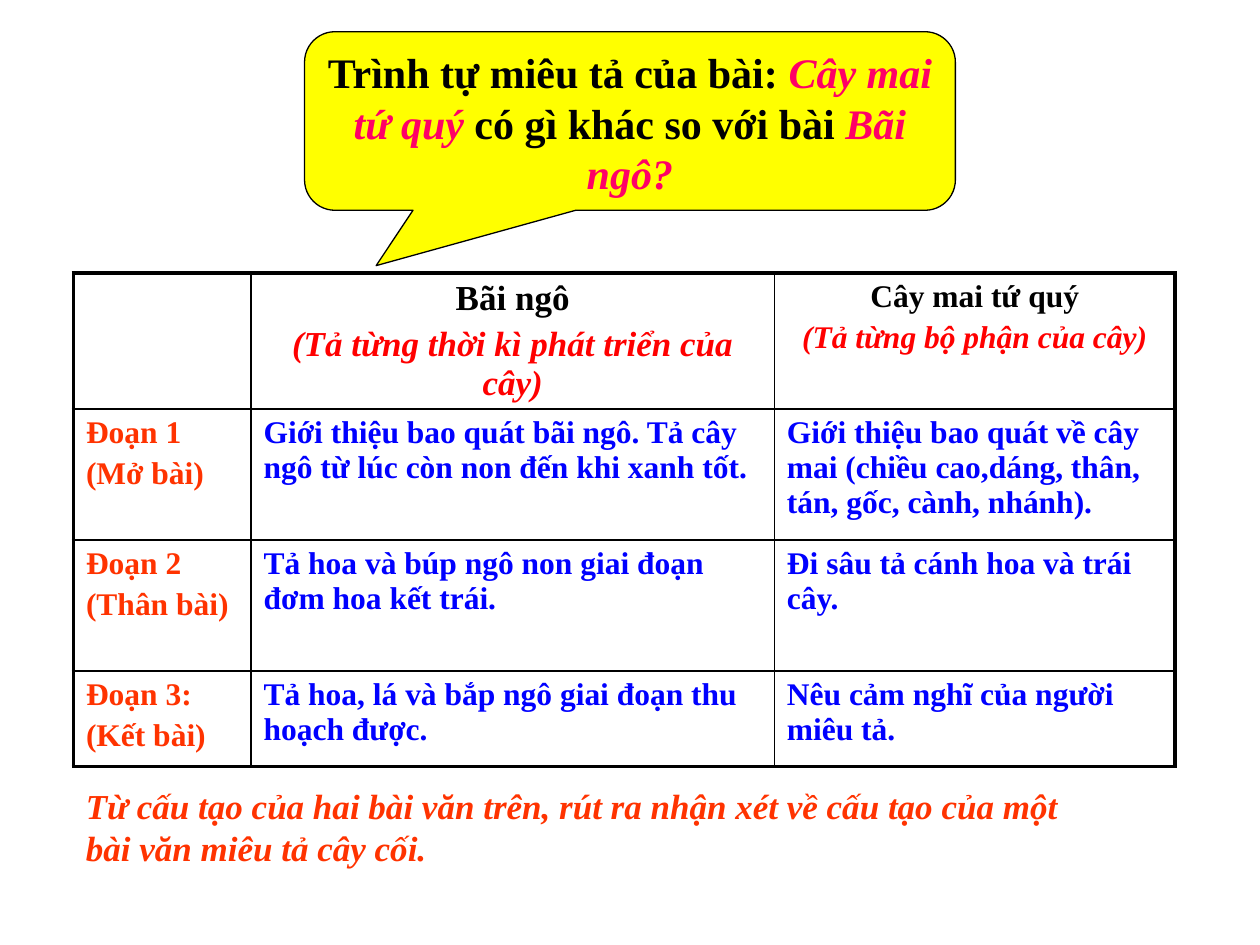
from dataclasses import dataclass

from lxml.etree import SubElement
from pptx import Presentation
from pptx.dml.color import RGBColor
from pptx.enum.shapes import MSO_SHAPE
from pptx.enum.text import MSO_ANCHOR, MSO_AUTO_SIZE, PP_ALIGN
from pptx.oxml.ns import qn
from pptx.util import Cm, Pt


@dataclass(frozen=True)
class Theme:
    """Colours, type sizes and line widths of the slide."""
    font: str = "Times New Roman"
    ink: str = "000000"
    bubble: str = "FFFF00"
    title: str = "FF0066"
    method: str = "FF0000"
    accent: str = "FF3300"
    body: str = "0000FF"
    large: int = 24
    medium: int = 20
    small: int = 18
    frame: float = 2.25
    rule: float = 1
    outline: float = 0.75


THEME = Theme()


def apply(obj, values):
    """Set each attribute named in values on obj."""
    for name, value in values.items():
        setattr(obj, name, value)


def add_paragraph(tf, runs, size, align=PP_ALIGN.LEFT, before=0):
    """Write (text, colour, italic) runs, with space before in percent."""
    p = tf.paragraphs[0]
    if p.runs:
        p = tf.add_paragraph()
    p.alignment = align
    if before:
        spacing = SubElement(p._p.get_or_add_pPr(), qn("a:spcBef"))
        SubElement(spacing, qn("a:spcPct"), val=str(before * 1000))
    for text, colour, italic in runs:
        r = p.add_run()
        r.text = text
        apply(r.font, {"name": THEME.font, "size": Pt(size),
                       "bold": True, "italic": italic})
        r.font.color.rgb = RGBColor.from_string(colour)


def add_border(cell, side, width):
    """Draw one side of a table cell."""
    ln = SubElement(cell._tc.get_or_add_tcPr(), qn(f"a:ln{side}"),
                    w=str(Pt(width)))
    fill = SubElement(ln, qn("a:solidFill"))
    SubElement(fill, qn("a:srgbClr"), val=THEME.ink)


def add_question(s, left, top, width, height):
    """Place the question in a speech bubble."""
    sp = s.shapes.add_shape(MSO_SHAPE.ROUNDED_RECTANGULAR_CALLOUT,
                            left, top, width, height)
    for i, value in enumerate((-0.39, 0.81, 0.17)):
        sp.adjustments[i] = value
    sp.shadow.inherit = False
    sp.fill.solid()
    sp.fill.fore_color.rgb = RGBColor.from_string(THEME.bubble)
    sp.line.color.rgb = RGBColor.from_string(THEME.ink)
    sp.line.width = Pt(THEME.outline)
    apply(sp.text_frame, {"word_wrap": True, "vertical_anchor": MSO_ANCHOR.TOP})
    runs = [
        ("Trình tự miêu tả của bài: ", THEME.ink, False),
        ("Cây mai tứ quý", THEME.title, True),
        (" có gì khác so với bài ", THEME.ink, False),
        ("Bãi ngô?", THEME.title, True),
    ]
    add_paragraph(sp.text_frame, runs, THEME.large, PP_ALIGN.CENTER)


def add_comparison(s, left, top, col_widths, row_heights):
    """Place the table that compares the two texts section by section."""
    headers = [
        ("Bãi ngô", "(Tả từng thời kì phát triển của cây)", THEME.medium),
        ("Cây mai tứ quý", "(Tả từng bộ phận của cây)", THEME.small),
    ]
    sections = [
        (("Đoạn 1", "(Mở bài)"),
         "Giới thiệu bao quát bãi ngô. Tả cây ngô từ lúc còn non đến khi xanh tốt.",
         "Giới thiệu bao quát về cây mai (chiều cao,dáng, thân, tán, gốc, cành, nhánh)."),
        (("Đoạn 2", "(Thân bài)"),
         "Tả hoa và búp ngô non giai đoạn đơm hoa kết trái.",
         "Đi sâu tả cánh hoa và trái cây."),
        (("Đoạn 3:", "(Kết bài)"),
         "Tả hoa, lá và bắp ngô giai đoạn thu hoạch được.",
         "Nêu cảm nghĩ của người miêu tả."),
    ]
    n_rows, n_cols = len(row_heights), len(col_widths)
    table = s.shapes.add_table(n_rows, n_cols, left, top, sum(col_widths),
                               sum(row_heights)).table
    apply(table, {"first_row": False, "horz_banding": False})
    for column, width in zip(table.columns, col_widths):
        column.width = width
    for row, height in zip(table.rows, row_heights):
        row.height = height

    for i in range(n_rows):
        for j in range(n_cols):
            cell = table.cell(i, j)
            outer = {"L": j == 0, "R": j == n_cols - 1,
                     "T": i == 0, "B": i == n_rows - 1}
            for side, on_frame in outer.items():
                add_border(cell, side, THEME.frame if on_frame else THEME.rule)
            cell.fill.background()

    for j, (name, method, size) in enumerate(headers, 1):
        tf = table.cell(0, j).text_frame
        for run in ((name, THEME.ink, False), (method, THEME.method, True)):
            add_paragraph(tf, [run], size, PP_ALIGN.CENTER, 20)
    for i, (labels, *contents) in enumerate(sections, 1):
        for label in labels:
            add_paragraph(table.cell(i, 0).text_frame,
                          [(label, THEME.accent, False)], THEME.small, before=20)
        for j, content in enumerate(contents, 1):
            add_paragraph(table.cell(i, j).text_frame,
                          [(content, THEME.body, False)], THEME.small, before=20)


def add_task(s, left, top, width, height):
    """Place the closing task below the table."""
    tf = s.shapes.add_textbox(left, top, width, height).text_frame
    apply(tf, {"word_wrap": True, "auto_size": MSO_AUTO_SIZE.SHAPE_TO_FIT_TEXT})
    text = ("Từ cấu tạo của hai bài văn trên, rút ra nhận xét về cấu tạo "
            "của một bài văn miêu tả cây cối.")
    add_paragraph(tf, [(text, THEME.accent, True)], THEME.medium, before=50)


def main():
    """Build and save the slide."""
    prs = Presentation()
    apply(prs, {"slide_width": Cm(25.4), "slide_height": Cm(19.05)})
    s = prs.slides.add_slide(prs.slide_layouts[6])
    margin = Cm(1.48)
    add_question(s, Cm(6.14), Cm(0.64), Cm(13.12), Cm(3.6))
    add_comparison(s, margin, Cm(5.5), [Cm(3.58), Cm(10.55), Cm(8.08)],
                   [Cm(2.74), Cm(2.64), Cm(2.64), Cm(1.93)])
    add_task(s, margin, Cm(15.68), Cm(20.75), Cm(1.96))
    prs.save("out.pptx")


if __name__ == "__main__":
    main()
